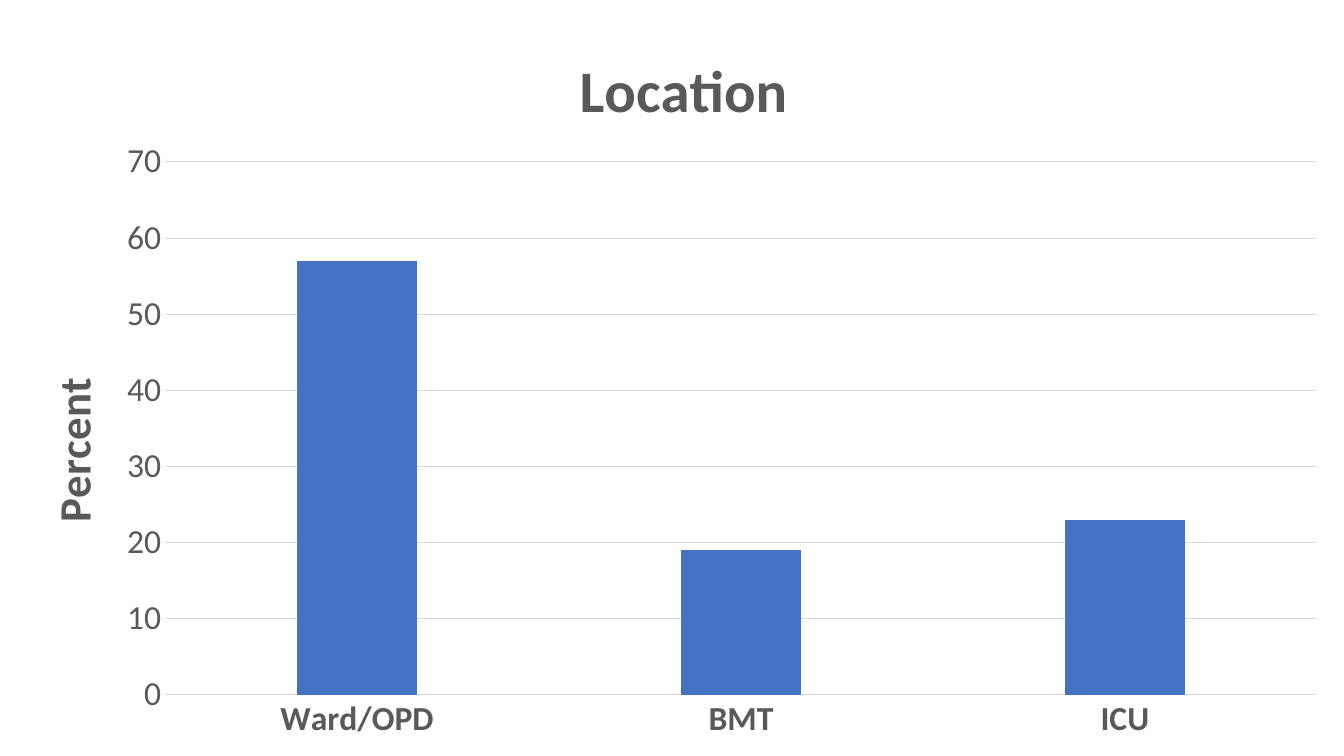
from lxml import etree
from pptx import Presentation
from pptx.chart.data import CategoryChartData
from pptx.dml.color import RGBColor
from pptx.enum.chart import XL_CHART_TYPE, XL_TICK_MARK
from pptx.oxml.ns import qn
from pptx.util import Emu, Pt

COLUMNS = XL_CHART_TYPE.COLUMN_CLUSTERED
NO_TICK = XL_TICK_MARK.NONE
PX = 9072  # EMU in one px, 100.8 px to the inch
WIDTH, HEIGHT = 1344, 756
FONT = "Calibri"
GREY, RULE, BLUE, WHITE = "595959", "D9D9D9", "4472C4", "FFFFFF"
LOCATIONS = {"Ward/OPD": 57, "BMT": 19, "ICU": 23}


def color(value):
    return RGBColor.from_string(value)


def style_font(font, size, bold=False):
    font.name = FONT
    font.size = Pt(size)
    font.bold = bold
    font.color.rgb = color(GREY)


def style_line(line):
    line.color.rgb = color(RULE)
    line.width = Pt(0.75)


def set_layout(parent, index, box, fractions):
    """Fix a chart part at fractions of the chart box."""
    for old in parent.findall(qn("c:layout")):
        parent.remove(old)
    layout = etree.Element(qn("c:layout"))
    manual = etree.SubElement(layout, qn("c:manualLayout"))
    for name, value in fractions:
        etree.SubElement(manual, qn("c:" + name)).set("val", str(value))
    parent.insert(index, layout)


def add_title(owner, text, size, left, top, box):
    owner.has_title = True
    title = owner.chart_title if hasattr(owner, "chart_title") else owner.axis_title
    title.text_frame.text = text
    style_font(title.text_frame.paragraphs[0].runs[0].font, size, True)
    set_layout(title._element, 1, box, [
        ("xMode", "edge"), ("yMode", "edge"),
        ("x", round(left / box[2], 4)), ("y", round(top / box[3], 4))])


def add_location_chart(page, box):
    data = CategoryChartData()
    data.categories = list(LOCATIONS)
    data.add_series("Series 1", list(LOCATIONS.values()))
    frame = page.shapes.add_chart(COLUMNS, *[Emu(side * PX) for side in box], data)
    chart = frame.chart
    chart.has_legend = False
    style_font(chart.font, 10)

    # Columns
    plot = chart.plots[0]
    plot.gap_width = 219
    plot.overlap = -27
    plot.vary_by_categories = False
    fill = plot.series[0].format.fill
    fill.solid()
    fill.fore_color.rgb = color(BLUE)

    # Axes
    places, percent = chart.category_axis, chart.value_axis
    for axis in (places, percent):
        axis.major_tick_mark = NO_TICK
        axis.minor_tick_mark = NO_TICK
        style_font(axis.tick_labels.font, 24, axis is places)
    style_line(places.format.line)
    percent.format.line.fill.background()
    style_line(percent.major_gridlines.format.line)
    percent.minimum_scale = 0
    percent.maximum_scale = 70
    percent.major_unit = 10

    # Titles and plot area
    add_title(chart, "Location", 42, 569, 39, box)
    add_title(percent, "Percent", 32, 34, 370, box)
    area = chart._chartSpace.chart.plotArea
    set_layout(area, 0, box, [
        ("layoutTarget", "inner"), ("xMode", "edge"), ("yMode", "edge"),
        ("x", round(165 / box[2], 4)), ("y", round(162 / box[3], 4)),
        ("w", round(1152 / box[2], 4)), ("h", round(533 / box[3], 4))])


def main():
    deck = Presentation()
    deck.slide_width = Emu(WIDTH * PX)
    deck.slide_height = Emu(HEIGHT * PX)
    page = deck.slides.add_slide(deck.slide_layouts[6])
    page.background.fill.solid()
    page.background.fill.fore_color.rgb = color(WHITE)
    add_location_chart(page, (0, 0, WIDTH, HEIGHT))
    deck.save("out.pptx")


if __name__ == "__main__":
    main()
